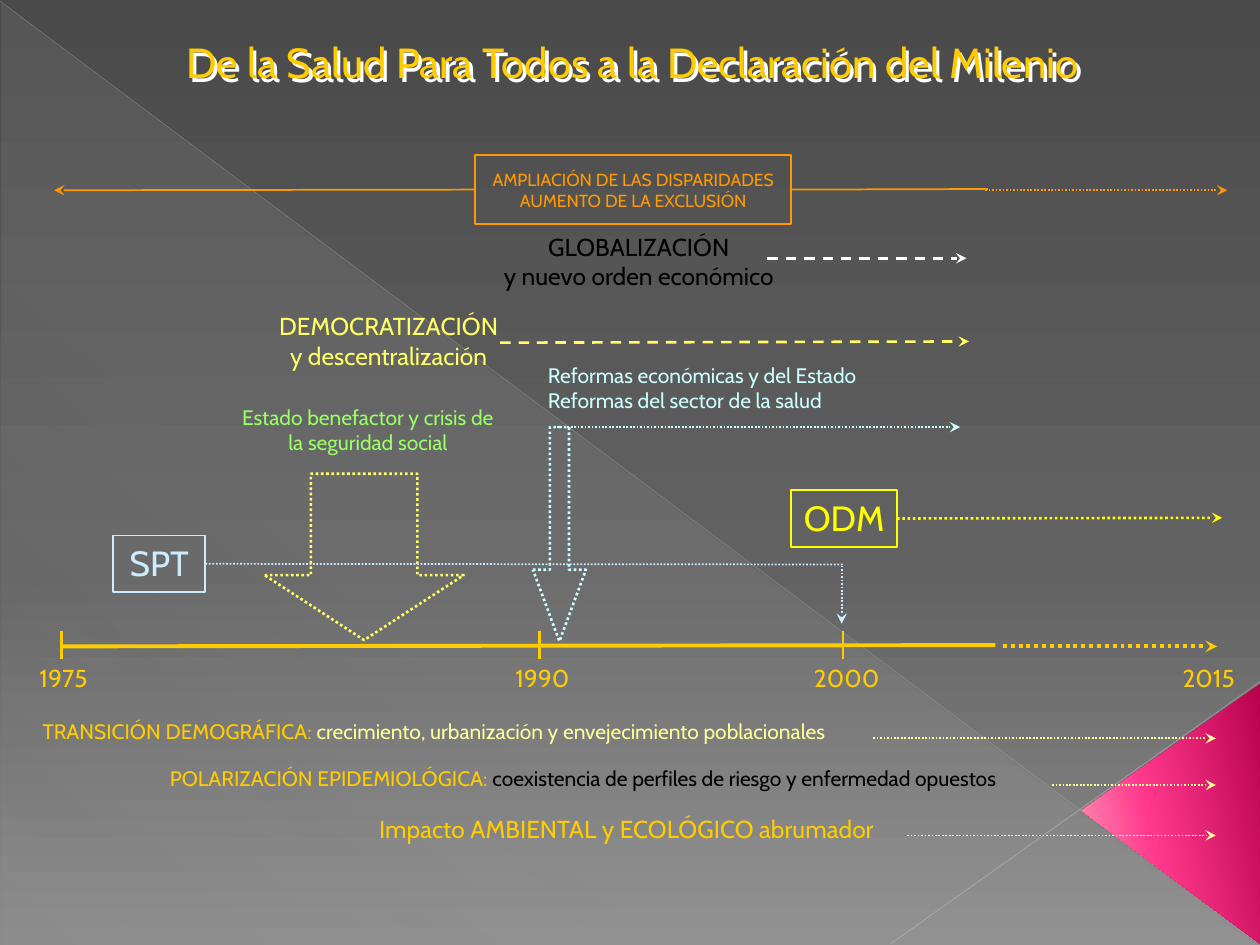
from lxml import etree
from pptx import Presentation
from pptx import util as u
from pptx.dml.color import RGBColor
from pptx.enum import dml, shapes, text
from pptx.oxml.ns import qn

# The slide is a grid of 100 columns by 75 rows of square cells
CELL = u.Inches(0.1)
FONT = "Cabin"
GOLD, YELLOW, LEMON, CREAM = "FFCC00", "FFFF00", "FFFF66", "FFFF99"
ORANGE, ICE, AQUA, GREEN = "FF9900", "CCECFF", "CCFFFF", "99FF66"
BLACK, WHITE = "000000", "FFFFFF"
DOT, DASH = dml.MSO_LINE.ROUND_DOT, dml.MSO_LINE.DASH
LEFT, CENTER, RIGHT = text.PP_ALIGN.LEFT, text.PP_ALIGN.CENTER, text.PP_ALIGN.RIGHT
TOP, MIDDLE = text.MSO_ANCHOR.TOP, text.MSO_ANCHOR.MIDDLE
SHAPE = shapes.MSO_SHAPE


def rgb(color):
    return RGBColor.from_string(color)


def cells(*values):
    return [round(v * CELL) for v in values]


def add_color(parent, color, opacity=100):
    clr = etree.SubElement(parent, qn("a:srgbClr"), val=color)
    if opacity < 100:
        etree.SubElement(clr, qn("a:alpha"), val=str(opacity * 1000))


def set_gradient(fill, props, stops, angle):
    """Swap the solid fill in props for stops of (position, color, opacity)."""
    fill.solid()
    grad = etree.Element(qn("a:gradFill"), rotWithShape="1")
    stop_list = etree.SubElement(grad, qn("a:gsLst"))
    for position, color, opacity in stops:
        stop = etree.SubElement(stop_list, qn("a:gs"), pos=str(position * 1000))
        add_color(stop, color, opacity)
    etree.SubElement(grad, qn("a:lin"), ang=str(angle * 60000), scaled="0")
    props.replace(props.find(qn("a:solidFill")), grad)


def write(sp, lines, size, color, align=CENTER, anchor=TOP, wrap=True):
    """Each line is a string, or a list of (text, color) runs."""
    tf = sp.text_frame
    tf.word_wrap = wrap
    tf.auto_size = text.MSO_AUTO_SIZE.NONE
    tf.vertical_anchor = anchor
    for i, line in enumerate(lines):
        p = tf.add_paragraph() if i else tf.paragraphs[0]
        p.alignment = align
        p.font.size, p.font.name = u.Pt(size), FONT
        if isinstance(line, str):
            p.font.color.rgb = rgb(color)
            line = [(line, None)]
        for words, run_color in line:
            r = p.add_run()
            r.text = words
            if run_color:
                r.font.color.rgb = rgb(run_color)


def add_label(s, box, lines, size, color, **layout):
    sp = s.shapes.add_textbox(*cells(*box))
    write(sp, lines, size, color, **layout)


def add_outline(s, kind, box, color, width=1, dash=None, adjust=()):
    sp = s.shapes.add_shape(kind, *cells(*box))
    sp.shadow.inherit = False
    sp.fill.background()
    sp.line.color.rgb = rgb(color)
    sp.line.width = u.Pt(width)
    if dash:
        sp.line.dash_style = dash
    for i, value in enumerate(adjust):
        sp.adjustments[i] = value
    return sp


def add_line(s, start, end, color, width=1, dash=None, head=False, tail=False,
             opacity=100, begin=None, finish=None):
    """begin and finish are (shape, side) pairs to join the ends to."""
    line = s.shapes.add_connector(shapes.MSO_CONNECTOR.STRAIGHT,
                                  *cells(*start, *end))
    if begin:
        line.begin_connect(*begin)
    if finish:
        line.end_connect(*finish)
    line.line.color.rgb = rgb(color)
    line.line.width = u.Pt(width)
    if dash:
        line.line.dash_style = dash
    props = line.element.spPr
    ln = props.find(qn("a:ln"))
    if opacity < 100:
        solid = ln.find(qn("a:solidFill"))
        solid.clear()
        add_color(solid, color, opacity)
    for wanted, tag in ((head, "a:headEnd"), (tail, "a:tailEnd")):
        if wanted:
            etree.SubElement(ln, qn(tag), type="stealth")
    etree.SubElement(props, qn("a:effectLst"))


def add_backdrop(s):
    set_gradient(s.background.fill, s.element.find(".//" + qn("p:bgPr")),
                 [(0, "4A4A4A", 100), (60, "626262", 100), (100, "8C8C8C", 100)], 90)
    veil = add_outline(s, SHAPE.RIGHT_TRIANGLE, (0.1, 0.2, 99.8, 74.8), WHITE)
    set_gradient(veil.fill, veil.element.spPr,
                 [(0, "D2D2D2", 10), (70, "D2D2D2", 8), (100, "D2D2D2", 1)], 133)
    add_line(s, (0, 0.1), (99.9, 74.9), "BFBFBF", 0.39, opacity=35)
    add_line(s, (100, 54.1), (70.7, 74.9), "C6C6C6", 0.47, opacity=45)
    corner = add_outline(s, SHAPE.ISOSCELES_TRIANGLE, (82.6, 57.5, 20.7, 14.2),
                         WHITE, adjust=[0.513])
    corner.rotation = 270
    set_gradient(corner.fill, corner.element.spPr,
                 [(0, "B8014E", 100), (60, "FF388C", 100), (100, "FF9CB9", 100)], 258)
    for sp in (veil, corner):
        sp.line.fill.background()


def add_title(s):
    title = s.shapes.title
    title.left, title.top, title.width, title.height = cells(4.1, 2.4, 92.2, 5)
    write(title, ["De la Salud Para Todos a la Declaración del Milenio"], 24, GOLD,
          anchor=MIDDLE)
    # Hard white shadow behind the letters
    effects = etree.SubElement(title.element.spPr, qn("a:effectLst"))
    shadow = etree.SubElement(effects, qn("a:outerShdw"), dist="35921",
                              dir="2700000", algn="ctr", rotWithShape="0")
    add_color(shadow, WHITE)


def add_timeline(s):
    add_line(s, (4.9, 51.3), (79, 51.2), GOLD, 2.25)
    add_line(s, (79.6, 51.3), (96.6, 51.3), GOLD, 2.25, DOT, tail=True)
    for x in (4.9, 42.8, 66.9):
        add_line(s, (x, 50.1), (x, 52.3), GOLD, 1.5)
    for year, x, width, align in (("1975", 1.1, 7.9, CENTER), ("1990", 38.7, 8.7, CENTER),
                                  ("2000", 63, 8.4, CENTER), ("2015", 89.8, 9.2, RIGHT)):
        add_label(s, (x, 52.1, width, 3.3), [year], 14, GOLD, align=align)


def add_goals(s):
    odm = add_outline(s, SHAPE.RECTANGLE, (62.8, 38.9, 8.4, 4.5), YELLOW)
    write(odm, ["ODM"], 20, YELLOW)
    add_line(s, (71.2, 41.1), (97, 41.1), YELLOW, 1.5, DOT, tail=True, begin=(odm, 3))
    spt = add_outline(s, SHAPE.RECTANGLE, (9, 42.5, 7.3, 4.5), ICE)
    write(spt, ["SPT"], 20, ICE)
    add_line(s, (16.3, 44.8), (66.9, 44.8), ICE, 1, DOT, begin=(spt, 3))
    add_line(s, (66.8, 44.9), (66.8, 49.5), ICE, 1, DOT, tail=True)


def add_processes(s):
    # Democratization and globalization
    add_label(s, (20.6, 24.2, 20.5, 5.7), ["DEMOCRATIZACIÓN y descentralización"], 14, LEMON)
    add_line(s, (39.7, 27.2), (76.9, 27.1), LEMON, 1.5, DASH, tail=True)
    add_label(s, (39.9, 18, 21.6, 5.5), ["GLOBALIZACIÓN", "y nuevo orden económico"],
              14, BLACK, anchor=MIDDLE, wrap=False)
    add_line(s, (60.9, 20.5), (76.7, 20.5), WHITE, 1.5, DASH, tail=True)
    # Welfare state and reforms, pointing down to the timeline
    add_label(s, (18.1, 31.6, 22.2, 5),
              ["Estado benefactor y crisis de la seguridad social"], 12, GREEN)
    add_outline(s, SHAPE.DOWN_ARROW, (21, 37.6, 15.8, 13.2), LEMON, 1.5, DOT, [0.535, 0.39])
    add_label(s, (42.5, 28.3, 29.1, 5),
              ["Reformas económicas y del Estado", "Reformas del sector de la salud"],
              12, AQUA, align=LEFT)
    add_outline(s, SHAPE.DOWN_ARROW, (42.3, 33.9, 4.2, 17), AQUA, 1.5, DOT, [0.361, 1.351])
    add_line(s, (44.2, 33.9), (76.2, 33.9), AQUA, 1, DOT, tail=True)


def add_disparities(s):
    box = add_outline(s, SHAPE.RECTANGLE, (37.7, 12.3, 25.1, 5.5), ORANGE)
    write(box, ["AMPLIACIÓN DE LAS DISPARIDADES", "AUMENTO DE LA EXCLUSIÓN"],
          10, ORANGE, anchor=MIDDLE, wrap=False)
    add_line(s, (4.3, 15.1), (37.7, 15.1), ORANGE, head=True, finish=(box, 1))
    add_line(s, (62.8, 15), (78.4, 15), ORANGE, begin=(box, 3))
    add_line(s, (78.2, 15.1), (97.4, 15.1), ORANGE, 1, DOT, tail=True)


def add_trends(s):
    demographic = [("TRANSICIÓN DEMOGRÁFICA: ", GOLD),
                   ("crecimiento, urbanización y envejecimiento poblacionales", CREAM)]
    epidemic = [("POLARIZACIÓN EPIDEMIOLÓGICA:", GOLD),
                (" coexistencia de perfiles de riesgo y enfermedad opuestos", BLACK)]
    impact = "Impacto AMBIENTAL y ECOLÓGICO abrumador"
    for line, size, box, start, y in (
            (demographic, 12, (2.4, 56.5, 74.9, 3), 69.3, 58.6),
            (epidemic, 12, (12.5, 60.3, 75.7, 3), 83.5, 62.3),
            (impact, 14, (29.1, 64.1, 50.2, 3.3), 72, 66.3)):
        add_label(s, box, [line], size, GOLD, align=LEFT)
        add_line(s, (start, y), (96.5, y), CREAM, 1, DOT, tail=True)


def main():
    prs = Presentation()
    prs.slide_width, prs.slide_height = cells(100, 75)
    s = prs.slides.add_slide(prs.slide_layouts[5])
    for add_part in (add_backdrop, add_processes, add_timeline, add_goals,
                     add_trends, add_title, add_disparities):
        add_part(s)
    prs.save("out.pptx")


if __name__ == "__main__":
    main()
